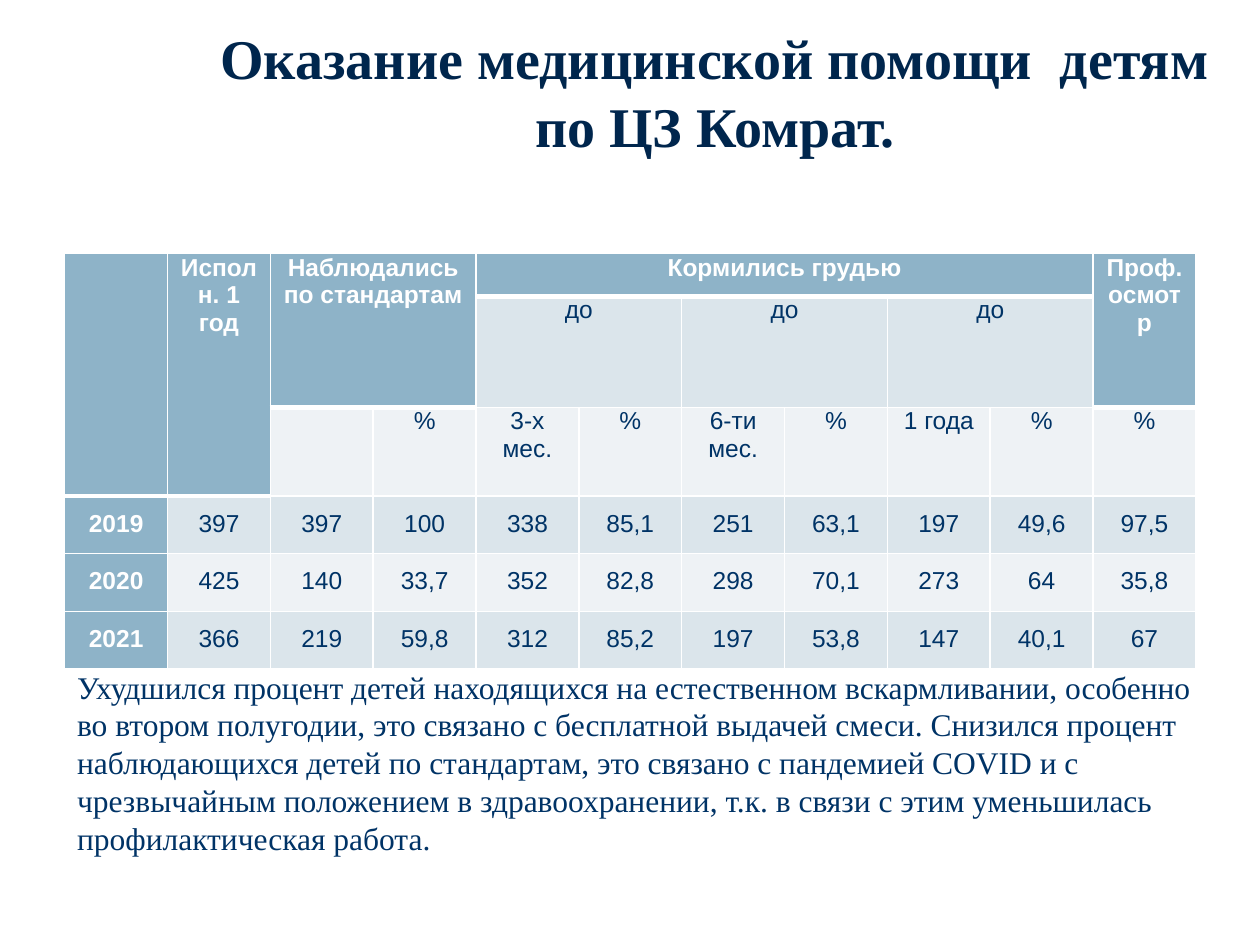
from lxml import etree
from pptx import Presentation
from pptx.dml.color import RGBColor
from pptx.enum.text import MSO_ANCHOR, PP_ALIGN
from pptx.oxml.ns import qn
from pptx.util import Pt

CENTER, LEFT = PP_ALIGN.CENTER, PP_ALIGN.LEFT
MIDDLE, TOP = MSO_ANCHOR.MIDDLE, MSO_ANCHOR.TOP

TITLE_COLOR, TEXT_COLOR, WHITE = "00264D", "003366", "FFFFFF"
HEADER_FILL, BAND_FILLS = "8EB3C8", ("EEF2F5", "DBE5EB")

TITLE = "Оказание медицинской помощи  детям по ЦЗ Комрат."
CONCLUSION = (
    "Ухудшился процент детей находящихся на естественном вскармливании, "
    "особенно во втором полугодии, это связано с бесплатной выдачей смеси. "
    "Снизился процент наблюдающихся детей по стандартам, это связано с "
    "пандемией COVID и с чрезвычайным положением в здравоохранении, т.к. в "
    "связи с этим уменьшилась профилактическая работа."
)
ROWS = [
    ["", "Исполн. 1 год", "Наблюдались по стандартам", "",
     "Кормились грудью", "", "", "", "", "", "Проф. осмотр"],
    ["", "", "", "", "до", "", "до", "", "до", "", ""],
    ["", "", "", "%", "3-х мес.", "%", "6-ти мес.", "%", "1 года", "%", "%"],
    ["2019", "397", "397", "100", "338", "85,1", "251", "63,1", "197", "49,6", "97,5"],
    ["2020", "425", "140", "33,7", "352", "82,8", "298", "70,1", "273", "64", "35,8"],
    ["2021", "366", "219", "59,8", "312", "85,2", "197", "53,8", "147", "40,1", "67"],
]
ROW_HEIGHTS = [24.5, 63.5, 44.5, 33, 33, 33]
FIRST_DATA_ROW = 3
# Number of dark header rows in each column
HEADER_DEPTHS = [3, 3, 2, 2, 1, 1, 1, 1, 1, 1, 2]
# First row, first column, last row, last column
MERGES = [(0, 0, 2, 0), (0, 1, 2, 1), (0, 2, 1, 3), (0, 4, 0, 9),
          (0, 10, 1, 10), (1, 4, 1, 5), (1, 6, 1, 7), (1, 8, 1, 9)]


def rgb(color):
    return RGBColor.from_string(color)


def write_text(text_frame, text, font_name, size, color, bold=False, align=LEFT):
    text_frame.text = text
    paragraph = text_frame.paragraphs[0]
    paragraph.alignment = align
    for run in paragraph.runs:
        run.font.name = font_name
        run.font.size = Pt(size)
        run.font.bold = bold
        run.font.color.rgb = rgb(color)
    return paragraph


def add_text(slide, box, text, size, color, bold=False, align=LEFT, anchor=TOP):
    shape = slide.shapes.add_textbox(*map(Pt, box))
    text_frame = shape.text_frame
    text_frame.word_wrap = True
    text_frame.vertical_anchor = anchor
    write_text(text_frame, text, "Times New Roman", size, color, bold, align)


def set_borders(cell, widths):
    properties = cell._tc.get_or_add_tcPr()
    for side, width in widths.items():
        line = etree.SubElement(properties, qn(f"a:ln{side}"), w=str(Pt(width)))
        fill = etree.SubElement(line, qn("a:solidFill"))
        etree.SubElement(fill, qn("a:srgbClr"), val=WHITE)


def style_cell(cell, text, row, column):
    depth = HEADER_DEPTHS[column]
    is_data = row >= FIRST_DATA_ROW
    is_header = row < depth or (is_data and column == 0)
    cell.margin_left = cell.margin_right = Pt(4.5)
    cell.margin_top = cell.margin_bottom = 0
    # A heavy rule closes each column's header
    set_borders(cell, {"L": 1, "R": 1,
                       "T": 3 if row == depth else 1,
                       "B": 3 if row < depth else 1})
    cell.fill.solid()
    cell.fill.fore_color.rgb = rgb(HEADER_FILL if is_header else BAND_FILLS[row % 2])
    paragraph = write_text(cell.text_frame, text, "Arial", 14,
                           WHITE if is_header else TEXT_COLOR, is_header, CENTER)
    if is_data:
        paragraph.line_spacing = 1.5


def add_care_table(slide, box):
    left, top, width, height = map(Pt, box)
    column_count = len(HEADER_DEPTHS)
    table = slide.shapes.add_table(len(ROWS), column_count, left, top, width, height).table
    for column in table.columns:
        column.width = round(width / column_count)
    for row, row_height in zip(table.rows, ROW_HEIGHTS):
        row.height = Pt(row_height)
    for row, texts in enumerate(ROWS):
        for column, text in enumerate(texts):
            style_cell(table.cell(row, column), text, row, column)
    for first_row, first_column, last_row, last_column in MERGES:
        table.cell(first_row, first_column).merge(table.cell(last_row, last_column))


def main():
    presentation = Presentation()
    presentation.slide_width, presentation.slide_height = Pt(720), Pt(540)
    slide = presentation.slides.add_slide(presentation.slide_layouts[6])

    # Title
    add_text(slide, (105, 21, 607, 62), TITLE, 32, TITLE_COLOR, True, CENTER, MIDDLE)
    # Care figures by year
    add_care_table(slide, (37, 145, 646.5, sum(ROW_HEIGHTS)))
    # Conclusion
    add_text(slide, (37, 378, 672.5, 116.5), CONCLUSION, 18, TEXT_COLOR)

    presentation.save("out.pptx")


if __name__ == "__main__":
    main()
